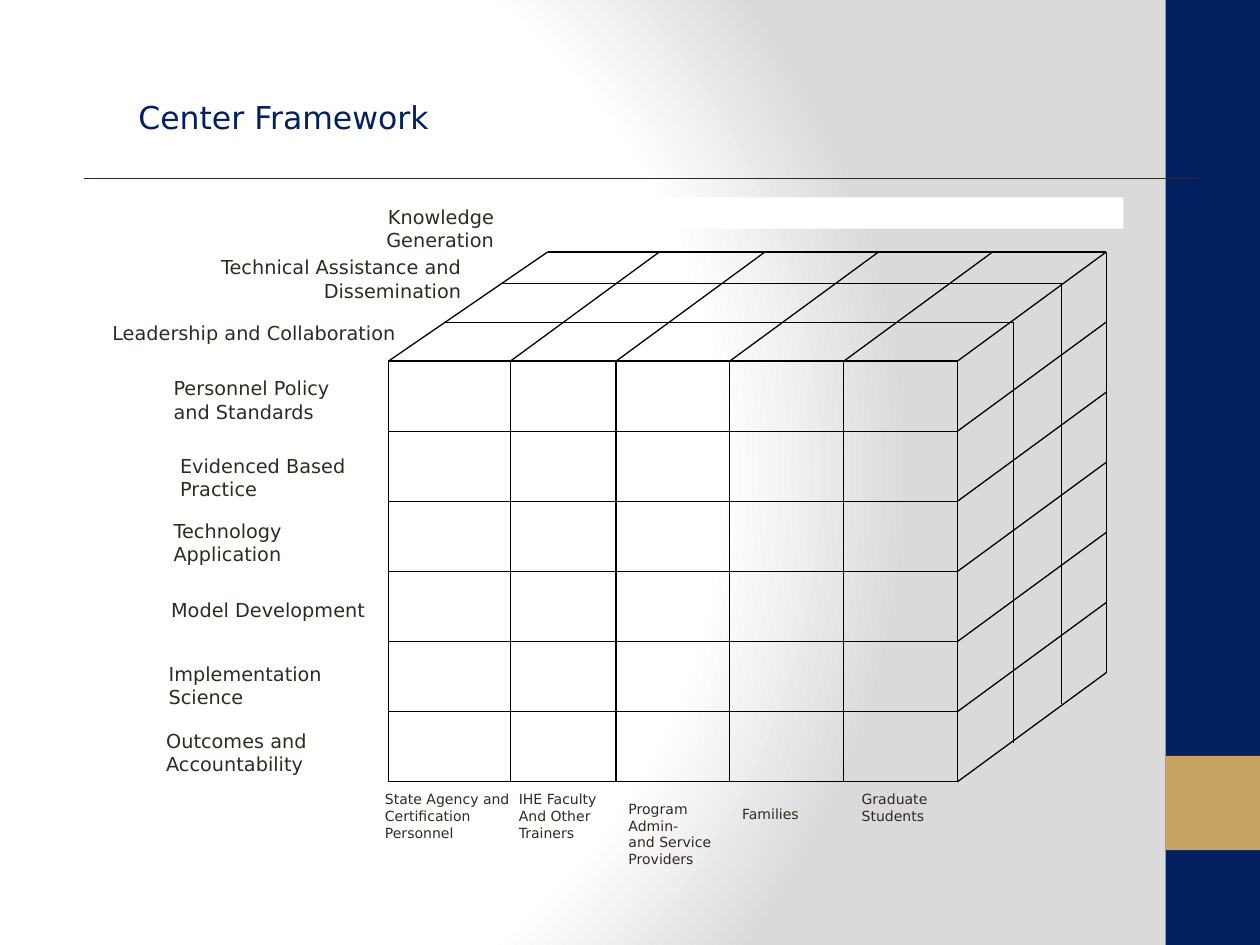
from dataclasses import dataclass

from lxml import etree
from pptx import Presentation
from pptx.dml.color import RGBColor
from pptx.enum.shapes import MSO_CONNECTOR, MSO_SHAPE
from pptx.enum.text import MSO_ANCHOR, MSO_AUTO_SIZE, PP_ALIGN
from pptx.oxml import parse_xml
from pptx.oxml.ns import nsdecls, qn
from pptx.util import Cm, Pt

RECTANGLE = MSO_SHAPE.RECTANGLE
STRAIGHT = MSO_CONNECTOR.STRAIGHT
LEFT, RIGHT = PP_ALIGN.LEFT, PP_ALIGN.RIGHT
TOP, MIDDLE = MSO_ANCHOR.TOP, MSO_ANCHOR.MIDDLE
LEFT_SIDE, RIGHT_SIDE = 1, 3


@dataclass(frozen=True)
class Theme:
    font: str = "DejaVu Sans"
    navy: str = "002060"
    gold: str = "C8A464"
    text: str = "2F2B20"
    white: str = "FFFFFF"
    gray: str = "DADADA"
    black: str = "000000"
    title_size: int = 18
    label_size: int = 11
    column_size: int = 8
    line_width: float = 0.75


theme = Theme()
presentation = Presentation()
presentation.slide_width = Cm(25.4)
presentation.slide_height = Cm(19.05)
slide = presentation.slides.add_slide(presentation.slide_layouts[6])


def add_text(text, left, top, width, height, size=theme.label_size,
             color=theme.text, align=LEFT, anchor=TOP, fit=MSO_AUTO_SIZE.SHAPE_TO_FIT_TEXT):
    """Add a wrapping text box, with one paragraph for each line of text."""
    box = slide.shapes.add_textbox(Cm(left), Cm(top), Cm(width), Cm(height))
    frame = box.text_frame
    frame.word_wrap = True
    frame.auto_size = fit
    frame.vertical_anchor = anchor
    frame.text = text
    for paragraph in frame.paragraphs:
        paragraph.alignment = align
        paragraph.font.name = theme.font
        paragraph.font.size = Pt(size)
        paragraph.font.color.rgb = RGBColor.from_string(color)


def add_line(x1, y1, x2, y2, color=theme.black):
    line = slide.shapes.add_connector(STRAIGHT, Cm(x1), Cm(y1), Cm(x2), Cm(y2))
    line.line.color.rgb = RGBColor.from_string(color)
    line.line.width = Pt(theme.line_width)
    etree.SubElement(line._element.spPr, qn("a:effectLst"))
    return line


# Background: round gradient, white on the left and gray on the right
background = parse_xml(f"""
<p:bg {nsdecls("p", "a")}><p:bgPr>
  <a:gradFill rotWithShape="1">
    <a:gsLst>
      <a:gs pos="0"><a:srgbClr val="{theme.white}"/></a:gs>
      <a:gs pos="75000"><a:srgbClr val="{theme.white}"/></a:gs>
      <a:gs pos="100000"><a:srgbClr val="{theme.gray}"/></a:gs>
    </a:gsLst>
    <a:path path="circle"><a:fillToRect l="20000" t="50000" r="100000" b="50000"/></a:path>
  </a:gradFill>
  <a:effectLst/>
</p:bgPr></p:bg>""")
slide._element.cSld.insert(0, background)

# Side bar, its gold square and the white band
for left, top, width, height, color in [
    (23.5, 0, 1.9, 19.05, theme.navy),
    (23.5, 15.24, 1.9, 1.9, theme.gold),
    (0, 3.98, 22.65, 0.63, theme.white),
]:
    bar = slide.shapes.add_shape(RECTANGLE, Cm(left), Cm(top), Cm(width), Cm(height))
    bar.shadow.inherit = False
    bar.fill.solid()
    bar.fill.fore_color.rgb = RGBColor.from_string(color)
    bar.line.fill.background()

add_text("Center Framework", 2.54, 0.76, 21.59, 3.18, size=theme.title_size,
         color=theme.navy, anchor=MIDDLE, fit=MSO_AUTO_SIZE.NONE)
add_line(1.7, 3.6, 24.13, 3.6, color=theme.text)

# Front of the cube
front_left, front_top, front_width, front_height = 7.83, 7.28, 11.47, 8.48
front_right = front_left + front_width
front_bottom = front_top + front_height
front = slide.shapes.add_shape(RECTANGLE, Cm(front_left), Cm(front_top),
                               Cm(front_width), Cm(front_height))
front.shadow.inherit = False
front.fill.background()
front.line.color.rgb = RGBColor.from_string(theme.black)
front.line.width = Pt(theme.line_width)

# Layers going back: left and right end on the top face, and height
layers = [(8.97, 20.43, 6.5), (10.13, 21.4, 5.71), (11.04, 22.3, 5.08)]
back_left, back_right, back_top = layers[-1]
depth_x, depth_y = back_right - front_right, back_top - front_top
for left, right, top in layers:
    add_line(left, top, right, top)
    add_line(right, top, right, top + front_height)

# Columns run up the front and back across the top
add_line(front_left, front_top, back_left, back_top)
for x in (10.29, 12.42, 14.71, 17.01):
    add_line(x, front_top, x, front_bottom)
    add_line(x, front_top, x + depth_x, back_top)

# Rows run along the front and back across the right side
row_count = 6
for row in range(row_count + 1):
    y = front_top + row * front_height / row_count
    depth_line = add_line(front_right, y, back_right, y + depth_y)
    if 0 < row < row_count:
        row_line = add_line(front_left, y, front_right, y)
    if row == row_count / 2:
        row_line.begin_connect(front, LEFT_SIDE)
        row_line.end_connect(front, RIGHT_SIDE)
        depth_line.begin_connect(front, RIGHT_SIDE)

# Labels of the layers
for text, left, top, width, height in [
    ("Knowledge Generation", 5.87, 4.01, 4.34, 1.19),
    ("Technical Assistance and Dissemination", 2.18, 5.03, 7.37, 1.19),
    ("Leadership and Collaboration", -0.89, 6.35, 9.12, 0.74),
]:
    add_text(text, left, top, width, height, align=RIGHT)

# Labels of the rows
for text, left, top, width, height in [
    ("Personnel Policy\nand Standards", 3.25, 7.47, 3.96, 1.19),
    ("Evidenced Based\nPractice", 3.38, 9.04, 4.37, 1.19),
    ("Technology\nApplication", 3.25, 10.34, 4.8, 1.19),
    ("Model Development", 3.2, 11.94, 4.62, 0.74),
    ("Implementation Science", 3.15, 13.23, 4.42, 1.19),
    ("Outcomes and Accountability", 3.1, 14.58, 4.93, 1.19),
]:
    add_text(text, left, top, width, height)

# Labels of the columns
for text, left, top, width, height in [
    ("State Agency and Certification Personnel", 7.51, 15.82, 3.04, 1.27),
    ("IHE Faculty\nAnd Other\nTrainers", 10.21, 15.82, 2.29, 1.27),
    ("Program\nAdmin-\nand Service\nProviders", 12.42, 16.01, 2.9, 1.7),
    ("Families", 14.71, 16.11, 2.41, 0.6),
    ("Graduate\nStudents", 17.12, 15.82, 3.91, 0.94),
]:
    add_text(text, left, top, width, height, size=theme.column_size)

presentation.save("out.pptx")
